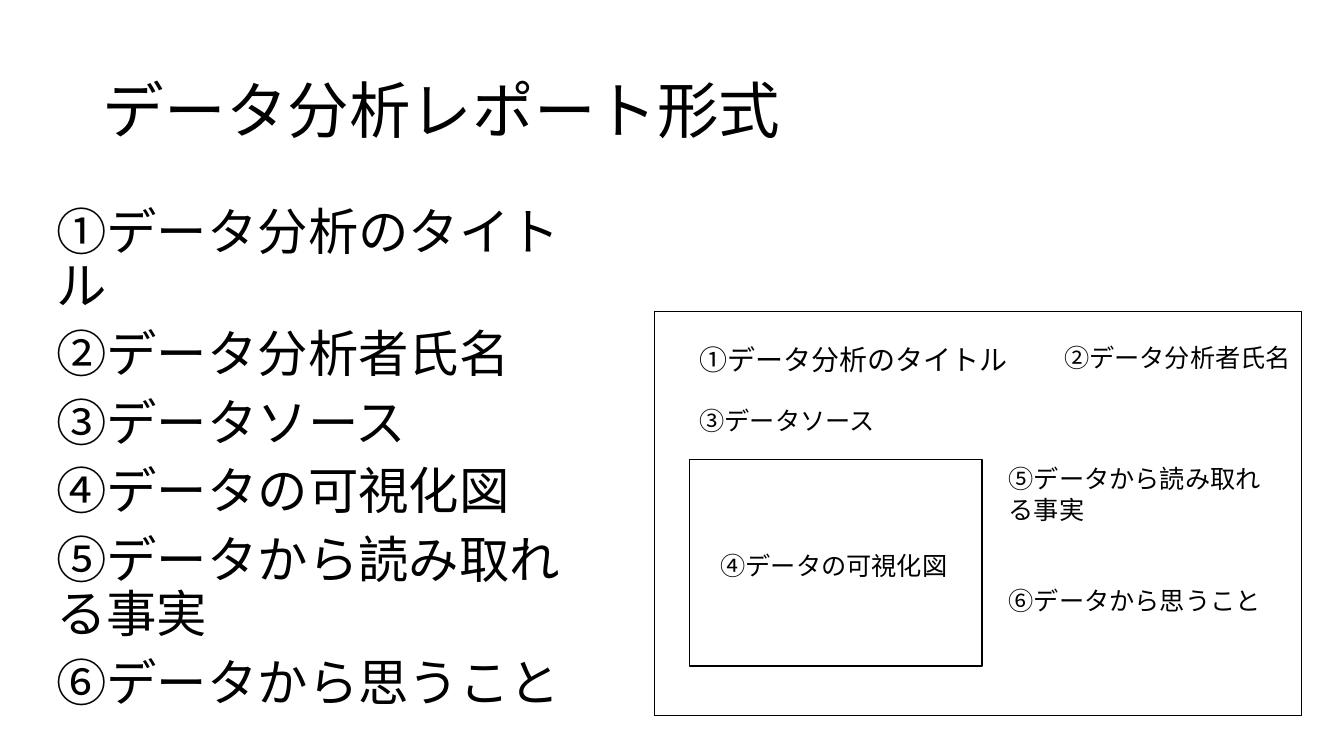
from dataclasses import dataclass
from pptx import Presentation
from pptx import util as u
from pptx.dml.color import RGBColor
from pptx.enum import shapes, text

COLORS = {"ink": "000000", "paper": "FFFFFF"}
FONT = "Calibri"
COLS, ROWS = 32, 18
CELL = u.Inches(7.5) / ROWS

TITLE = "データ分析レポート形式"
ITEMS = [
    "①データ分析のタイトル",
    "②データ分析者氏名",
    "③データソース",
    "④データの可視化図",
    "⑤データから読み取れる事実",
    "⑥データから思うこと",
]


@dataclass(frozen=True)
class Area:
    """Position and size in grid columns and rows."""
    col: float
    row: float
    cols: float
    rows: float

    def emu(self) -> list[int]:
        return [round(n * CELL) for n in (self.col, self.row, self.cols, self.rows)]


@dataclass(frozen=True)
class Block:
    area: Area
    lines: list[str]
    size: int
    wrap: bool = False
    grow: bool = True
    gap: float = 0
    leading: float = 1.0


def fill_text(tf, block: Block) -> None:
    tf.word_wrap = block.wrap
    tf.auto_size = (text.MSO_AUTO_SIZE.SHAPE_TO_FIT_TEXT if block.grow
                    else text.MSO_AUTO_SIZE.NONE)
    for i, line in enumerate(block.lines):
        p = tf.add_paragraph() if i else tf.paragraphs[0]
        p.text = line
        p.alignment = text.PP_ALIGN.LEFT
        p.line_spacing = block.leading
        p.space_before = u.Pt(block.gap if i else 0)
        for r in p.runs:
            r.font.name = FONT
            r.font.size = u.Pt(block.size)
            r.font.color.rgb = RGBColor.from_string(COLORS["ink"])


def add_block(slide, block: Block) -> None:
    sp = slide.shapes.add_textbox(*block.area.emu())
    fill_text(sp.text_frame, block)


def add_frame(slide, area: Area) -> None:
    sp = slide.shapes.add_shape(shapes.MSO_SHAPE.RECTANGLE, *area.emu())
    sp.shadow.inherit = False
    sp.fill.background()
    sp.line.color.rgb = RGBColor.from_string(COLORS["ink"])
    sp.line.width = u.Pt(1)


# Grid lines shared by the report sketch
LEFT, HEAD = 16.42, 8.04

TITLE_BLOCK = Block(Area(2.21, 0.96, 27.6, 3.48), [TITLE], 44,
                    wrap=True, grow=False, leading=0.9)
CHECKLIST = Block(Area(1.1, 4.8, 13.66, 11.42), ITEMS, 36,
                  wrap=True, grow=False, gap=10, leading=0.9)
FRAMES = [
    Area(15.58, 7.42, 15.41, 9.62),  # report page
    Area(LEFT, 10.94, 6.96, 4.92),   # chart area
]
LABELS = [
    Block(Area(LEFT, HEAD, 7.9, 1.06), [ITEMS[0]], 20),
    Block(Area(25.1, HEAD, 5.93, 0.96), [ITEMS[1]], 18),
    Block(Area(LEFT, 9.53, 4.73, 0.96), [ITEMS[2]], 18),
    Block(Area(16.92, 12.98, 5.93, 0.96), [ITEMS[3]], 18),
    Block(Area(23.78, 10.92, 6.53, 3.89), ITEMS[4:], 18, wrap=True, gap=43.5),
]


def main() -> None:
    prs = Presentation()
    prs.slide_width, prs.slide_height = round(COLS * CELL), round(ROWS * CELL)
    slide = prs.slides.add_slide(prs.slide_layouts[5])
    slide.background.fill.solid()
    slide.background.fill.fore_color.rgb = RGBColor.from_string(COLORS["paper"])

    # Title
    title = slide.shapes.title
    title.left, title.top, title.width, title.height = TITLE_BLOCK.area.emu()
    fill_text(title.text_frame, TITLE_BLOCK)
    title.text_frame.vertical_anchor = text.MSO_ANCHOR.MIDDLE

    # Checklist on the left
    add_block(slide, CHECKLIST)

    # Report sketch on the right
    for area in FRAMES:
        add_frame(slide, area)
    for label in LABELS:
        add_block(slide, label)

    prs.save("out.pptx")


if __name__ == "__main__":
    main()
